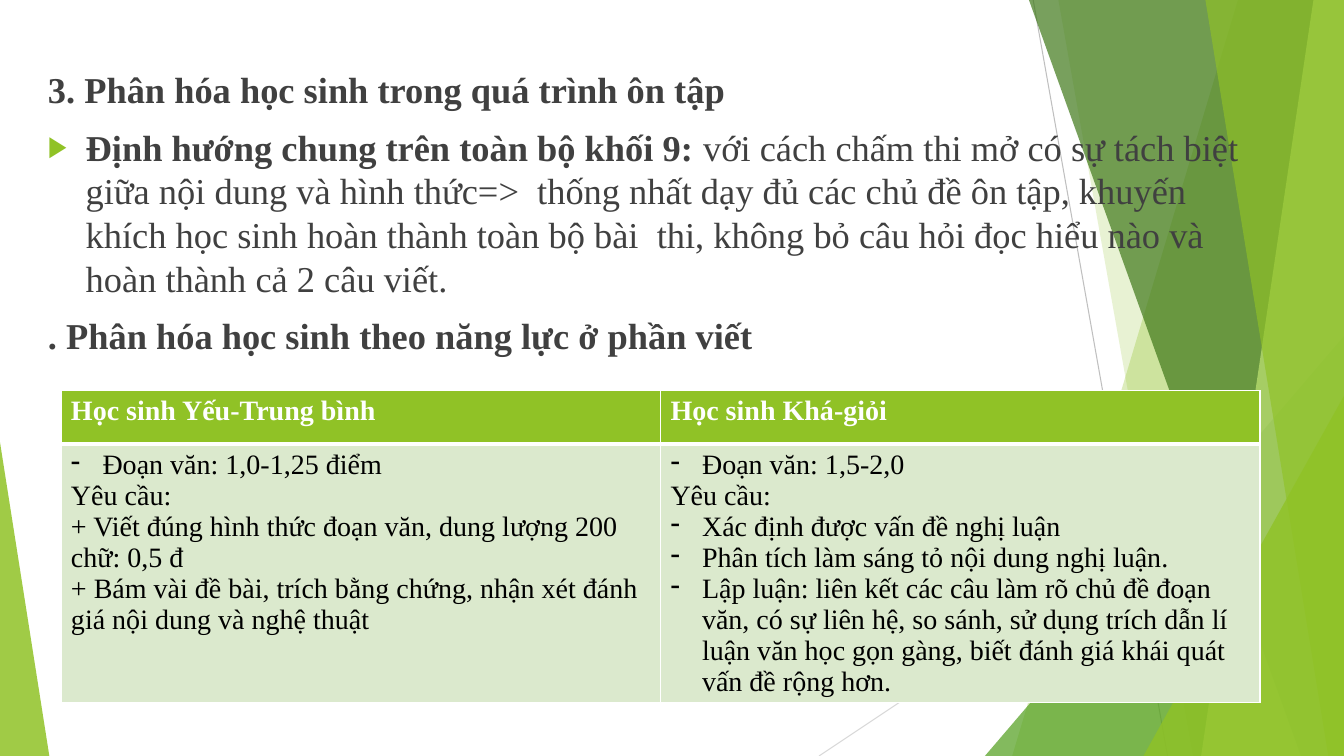
"""Build the slide on differentiating pupils during exam revision."""
from dataclasses import dataclass

from lxml import etree
from pptx import Presentation
from pptx.dml.color import RGBColor
from pptx.enum.shapes import MSO_CONNECTOR, MSO_SHAPE
from pptx.enum.text import MSO_ANCHOR, MSO_AUTO_SIZE
from pptx.oxml.ns import qn
from pptx.util import Pt

PX = 9525
WIDTH, HEIGHT = 1280, 720
STRAIGHT = MSO_CONNECTOR.STRAIGHT
TRIANGLE = MSO_SHAPE.ISOSCELES_TRIANGLE
TOP = MSO_ANCHOR.TOP
NO_AUTOFIT = MSO_AUTO_SIZE.NONE


@dataclass(frozen=True)
class Theme:
    font: str = "Times New Roman"
    body_size: int = 26
    table_size: int = 20
    body_gap: int = 10
    text: str = "404040"
    black: str = "000000"
    white: str = "FFFFFF"
    lime: str = "90C226"
    green: str = "54A021"
    forest: str = "3F7819"
    pale_lime: str = "C0E474"
    row_tint: str = "DBE9CD"
    steep_line: str = "BFBFBF"
    shallow_line: str = "D9D9D9"


THEME = Theme()


@dataclass(frozen=True)
class Ray:
    start: tuple[int, int]
    end: tuple[int, int]
    color: str


@dataclass(frozen=True)
class Band:
    top_x: int
    bottom_x: int
    color: str
    opacity: int


@dataclass(frozen=True)
class Wedge:
    left: int
    top: int
    width: int
    apex: int
    color: str
    opacity: int


@dataclass(frozen=True)
class Bullet:
    char: str
    indent: int
    color: str = ""
    percent: int = 100


@dataclass(frozen=True)
class Line:
    lead: str = ""
    rest: str = ""
    bullet: Bullet | None = None


ARROW = Bullet("▶", 36, THEME.lime, 80)
DASH = Bullet("-", 30)

RAYS = (
    Ray((984, 0), (1112, HEIGHT), THEME.steep_line),
    Ray((WIDTH, 387), (780, HEIGHT), THEME.shallow_line),
)
FACETS = (
    Band(1179, 964, THEME.lime, 30),
    Band(1008, 1136, THEME.lime, 20),
    Wedge(938, 320, 342, 1, THEME.green, 72),
    Band(980, 1239, THEME.forest, 70),
    Band(1251, 1144, THEME.pale_lime, 70),
    Band(1148, 1265, THEME.lime, 65),
    Wedge(1089, 377, 191, 1, THEME.lime, 80),
    Wedge(0, 421, 47, 0, THEME.lime, 85),
)
GUIDANCE = (
    Line("3. Phân hóa học sinh trong quá trình ôn tập"),
    Line("Định hướng chung trên toàn bộ khối 9: ",
         "với cách chấm thi mở có sự tách biệt giữa nội dung và hình thức=>  thống nhất dạy đủ "
         "các chủ đề ôn tập, khuyến khích học sinh hoàn thành toàn bộ bài  thi, không bỏ câu hỏi "
         "đọc hiểu nào và hoàn thành cả 2 câu viết.", ARROW),
    Line(". Phân hóa học sinh theo năng lực ở phần viết"),
)
LEVELS = (
    (Line("Học sinh Yếu-Trung bình"),),
    (Line("Học sinh Khá-giỏi"),),
)
TASKS = (
    (Line(rest="Đoạn văn: 1,0-1,25 điểm", bullet=DASH),
     Line(rest="Yêu cầu:"),
     Line(rest="+ Viết đúng hình thức đoạn văn, dung lượng 200 chữ: 0,5 đ"),
     Line(rest="+ Bám vài đề bài, trích bằng chứng, nhận xét đánh giá nội dung và nghệ thuật")),
    (Line(rest="Đoạn văn: 1,5-2,0", bullet=DASH),
     Line(rest="Yêu cầu:"),
     Line(rest="Xác định được vấn đề nghị luận", bullet=DASH),
     Line(rest="Phân tích làm sáng tỏ nội dung nghị luận.", bullet=DASH),
     Line(rest="Lập luận: liên kết các câu làm rõ chủ đề đoạn văn, có sự liên hệ, so sánh, "
               "sử dụng trích dẫn lí luận văn học gọn gàng, biết đánh giá khái quát vấn đề "
               "rộng hơn.", bullet=DASH)),
)


def add(parent, tag: str, **attributes):
    return etree.SubElement(parent, qn(tag), attributes)


def paint(facet, color: str, opacity: int) -> None:
    facet.shadow.inherit = False
    facet.line.fill.background()
    facet.fill.solid()
    facet.fill.fore_color.rgb = RGBColor.from_string(color)
    tint = next(facet.element.spPr.iter(qn("a:srgbClr")))
    add(tint, "a:alpha", val=str(opacity * 1000))


def draw_ray(slide, ray: Ray) -> None:
    points = [value * PX for value in ray.start + ray.end]
    stroke = slide.shapes.add_connector(STRAIGHT, *points)
    stroke.line.color.rgb = RGBColor.from_string(ray.color)
    stroke.line.width = Pt(0.75)
    add(stroke.element.spPr, "a:effectLst")


def draw_band(slide, band: Band) -> None:
    outline = slide.shapes.build_freeform(band.top_x, 0, scale=PX)
    outline.add_line_segments([(WIDTH, 0), (WIDTH, HEIGHT), (band.bottom_x, HEIGHT)])
    paint(outline.convert_to_shape(), band.color, band.opacity)


def draw_wedge(slide, wedge: Wedge) -> None:
    box = (wedge.left, wedge.top, wedge.width, HEIGHT - wedge.top)
    facet = slide.shapes.add_shape(TRIANGLE, *(value * PX for value in box))
    facet.adjustments[0] = wedge.apex
    paint(facet, wedge.color, wedge.opacity)


def write(paragraph, text: str, *, size: int, color: str, bold: bool) -> None:
    run = paragraph.add_run()
    run.text = text
    run.font.name = THEME.font
    run.font.size = Pt(size)
    run.font.bold = bold
    run.font.color.rgb = RGBColor.from_string(color)


def set_bullet(paragraph, bullet: Bullet | None) -> None:
    properties = paragraph._p.get_or_add_pPr()
    indent = bullet.indent * PX if bullet else 0
    properties.set("marL", str(indent))
    properties.set("indent", str(-indent))
    if bullet is None:
        add(properties, "a:buNone")
        return
    if bullet.color:
        add(add(properties, "a:buClr"), "a:srgbClr", val=bullet.color)
    add(properties, "a:buSzPct", val=str(bullet.percent * 1000))
    add(properties, "a:buChar", char=bullet.char)


def fill_text(frame, lines: tuple[Line, ...], *, size: int, color: str, gap: int = 0) -> None:
    for index, line in enumerate(lines):
        paragraph = frame.add_paragraph() if index else frame.paragraphs[0]
        paragraph.space_before = Pt(gap)
        set_bullet(paragraph, line.bullet)
        for text, bold in ((line.lead, True), (line.rest, False)):
            if text:
                write(paragraph, text, size=size, color=color, bold=bold)


def set_borders(cell, bottom: int) -> None:
    properties = cell._tc.get_or_add_tcPr()
    for side, points in (("L", 1), ("R", 1), ("T", 1), ("B", bottom)):
        border = add(properties, f"a:ln{side}", w=str(Pt(points)))
        add(add(border, "a:solidFill"), "a:srgbClr", val=THEME.white)


def draw_levels(slide) -> None:
    box = (58, 372, 1142, 297)
    levels = slide.shapes.add_table(2, 2, *(value * PX for value in box)).table
    levels.horz_banding = False
    rows = ((LEVELS, 51, THEME.lime, THEME.white, 3),
            (TASKS, 246, THEME.row_tint, THEME.black, 1))
    for row, (entries, height, tint, color, bottom) in enumerate(rows):
        levels.rows[row].height = height * PX
        for column, lines in enumerate(entries):
            cell = levels.cell(row, column)
            set_borders(cell, bottom)
            cell.fill.solid()
            cell.fill.fore_color.rgb = RGBColor.from_string(tint)
            fill_text(cell.text_frame, lines, size=THEME.table_size, color=color)


def main() -> None:
    deck = Presentation()
    deck.slide_width, deck.slide_height = WIDTH * PX, HEIGHT * PX
    slide = deck.slides.add_slide(deck.slide_layouts[1])
    heading, guidance = slide.placeholders
    tree = heading.element.getparent()
    tree.remove(heading.element)
    for ray in RAYS:
        draw_ray(slide, ray)
    for facet in FACETS:
        (draw_band if isinstance(facet, Band) else draw_wedge)(slide, facet)
    tree.append(guidance.element)
    guidance.left, guidance.top, guidance.width, guidance.height = (
        value * PX for value in (36, 59, 1156, 641))
    guidance.text_frame.auto_size = NO_AUTOFIT
    guidance.text_frame.vertical_anchor = TOP
    fill_text(guidance.text_frame, GUIDANCE, size=THEME.body_size, color=THEME.text,
              gap=THEME.body_gap)
    draw_levels(slide)
    deck.save("out.pptx")


if __name__ == "__main__":
    main()
